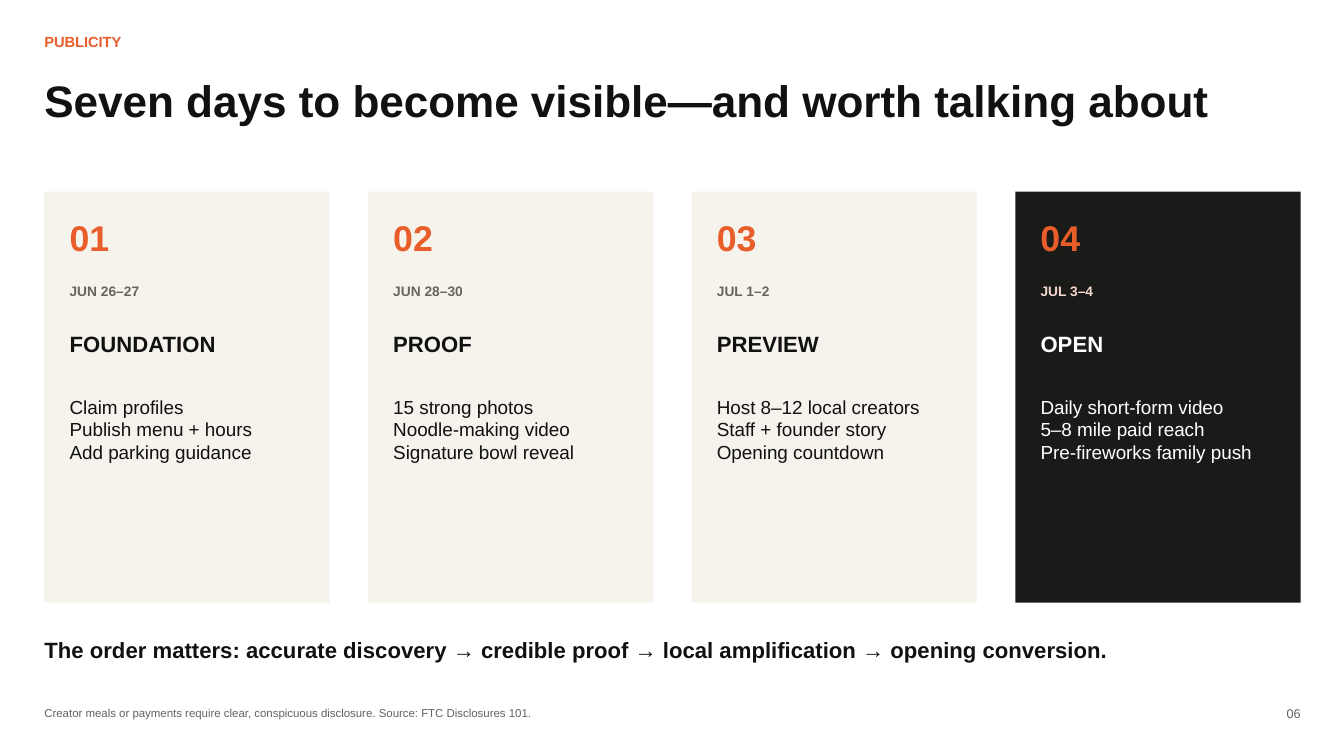
from dataclasses import dataclass

from pptx import Presentation
from pptx.dml.color import RGBColor
from pptx.enum.shapes import MSO_SHAPE as Shape
from pptx.enum.text import MSO_ANCHOR as Anchor, MSO_AUTO_SIZE as AutoSize, PP_ALIGN as Align
from pptx.util import Inches, Pt


@dataclass(frozen=True)
class Theme:
    font: str = "Arial"
    background: str = "FFFFFF"
    ink: str = "111111"
    muted: str = "66635D"
    accent: str = "E85D2A"
    card: str = "F6F3ED"
    dark_card: str = "1A1A18"
    dark_ink: str = "FFFFFF"
    dark_muted: str = "F5D9CD"
    title_size: float = 31.5
    number_size: float = 25.5
    heading_size: float = 15.8
    body_size: float = 13.5
    kicker_size: float = 10.5
    date_size: float = 9.8
    page_size: float = 9
    note_size: float = 8.2


class SlideBuilder:
    """Draws styled elements on one slide."""

    def __init__(self, presentation, theme):
        self.theme = theme
        self.slide = presentation.slides.add_slide(presentation.slide_layouts[5])
        fill = self.slide.background.fill
        fill.solid()
        fill.fore_color.rgb = RGBColor.from_string(theme.background)

    def set_text(self, shape, text, size, color, bold, align=Align.LEFT):
        frame = shape.text_frame
        frame.text = text
        frame.word_wrap = True
        frame.auto_size = AutoSize.NONE
        frame.vertical_anchor = Anchor.TOP
        frame.margin_left = frame.margin_right = 0
        frame.margin_top = frame.margin_bottom = 0
        for paragraph in frame.paragraphs:
            paragraph.alignment = align
            paragraph.line_spacing = 1.0
            for run in paragraph.runs:
                run.font.name = self.theme.font
                run.font.size = Pt(size)
                run.font.bold = bold
                run.font.color.rgb = RGBColor.from_string(color)

    def title(self, text, left, top, width, height):
        shape = self.slide.shapes.title
        shape.left, shape.top = Inches(left), Inches(top)
        shape.width, shape.height = Inches(width), Inches(height)
        self.set_text(shape, text, self.theme.title_size, self.theme.ink, True)

    def text(self, text, left, top, width, height, size, color, bold=False, align=Align.LEFT):
        box = self.slide.shapes.add_textbox(Inches(left), Inches(top), Inches(width), Inches(height))
        self.set_text(box, text, size, color, bold, align)

    def rectangle(self, left, top, width, height, color):
        shape = self.slide.shapes.add_shape(
            Shape.RECTANGLE, Inches(left), Inches(top), Inches(width), Inches(height))
        shape.shadow.inherit = False
        shape.fill.solid()
        shape.fill.fore_color.rgb = RGBColor.from_string(color)
        shape.line.fill.background()

    def card(self, left, width, number, dates, heading, actions, dark):
        theme = self.theme
        fill = theme.dark_card if dark else theme.card
        ink = theme.dark_ink if dark else theme.ink
        muted = theme.dark_muted if dark else theme.muted
        inner = left + 0.25
        self.rectangle(left, 1.9, width, 4.08, fill)
        self.text(f"{number:02}", inner, 2.14, 0.83, 0.48, theme.number_size, theme.accent, True)
        self.text(dates, inner, 2.81, 2.29, 0.23, theme.date_size, muted, True)
        self.text(heading, inner, 3.28, 2.29, 0.31, theme.heading_size, ink, True)
        self.text("\n".join(actions), inner, 3.92, 2.29, 1.35, theme.body_size, ink)


PHASES = [
    ("JUN 26–27", "FOUNDATION", ["Claim profiles", "Publish menu + hours", "Add parking guidance"]),
    ("JUN 28–30", "PROOF", ["15 strong photos", "Noodle-making video", "Signature bowl reveal"]),
    ("JUL 1–2", "PREVIEW", ["Host 8–12 local creators", "Staff + founder story", "Opening countdown"]),
    ("JUL 3–4", "OPEN", ["Daily short-form video", "5–8 mile paid reach", "Pre-fireworks family push"]),
]
LEFT, RIGHT, CARD_WIDTH = 0.44, 12.9, 2.83


def main():
    presentation = Presentation()
    presentation.slide_width, presentation.slide_height = Inches(13.33), Inches(7.5)
    theme = Theme()
    builder = SlideBuilder(presentation, theme)

    builder.text("PUBLICITY", LEFT, 0.33, 3.65, 0.23, theme.kicker_size, theme.accent, True)
    builder.title("Seven days to become visible—and worth talking about", LEFT, 0.73, 11.67, 0.75)

    pitch = (RIGHT - LEFT - CARD_WIDTH) / (len(PHASES) - 1)
    for index, (dates, heading, actions) in enumerate(PHASES):
        is_last = index == len(PHASES) - 1
        builder.card(LEFT + index * pitch, CARD_WIDTH, index + 1, dates, heading, actions, is_last)

    builder.text(
        "The order matters: accurate discovery → credible proof → local amplification → opening conversion.",
        LEFT, 6.31, 11.88, 0.35, theme.heading_size, theme.ink, True)
    builder.text(
        "Creator meals or payments require clear, conspicuous disclosure. Source: FTC Disclosures 101.",
        LEFT, 7, 11.15, 0.19, theme.note_size, theme.muted)
    builder.text("06", RIGHT - 0.48, 7, 0.48, 0.19, theme.page_size, theme.muted, align=Align.RIGHT)

    presentation.save("out.pptx")


if __name__ == "__main__":
    main()
